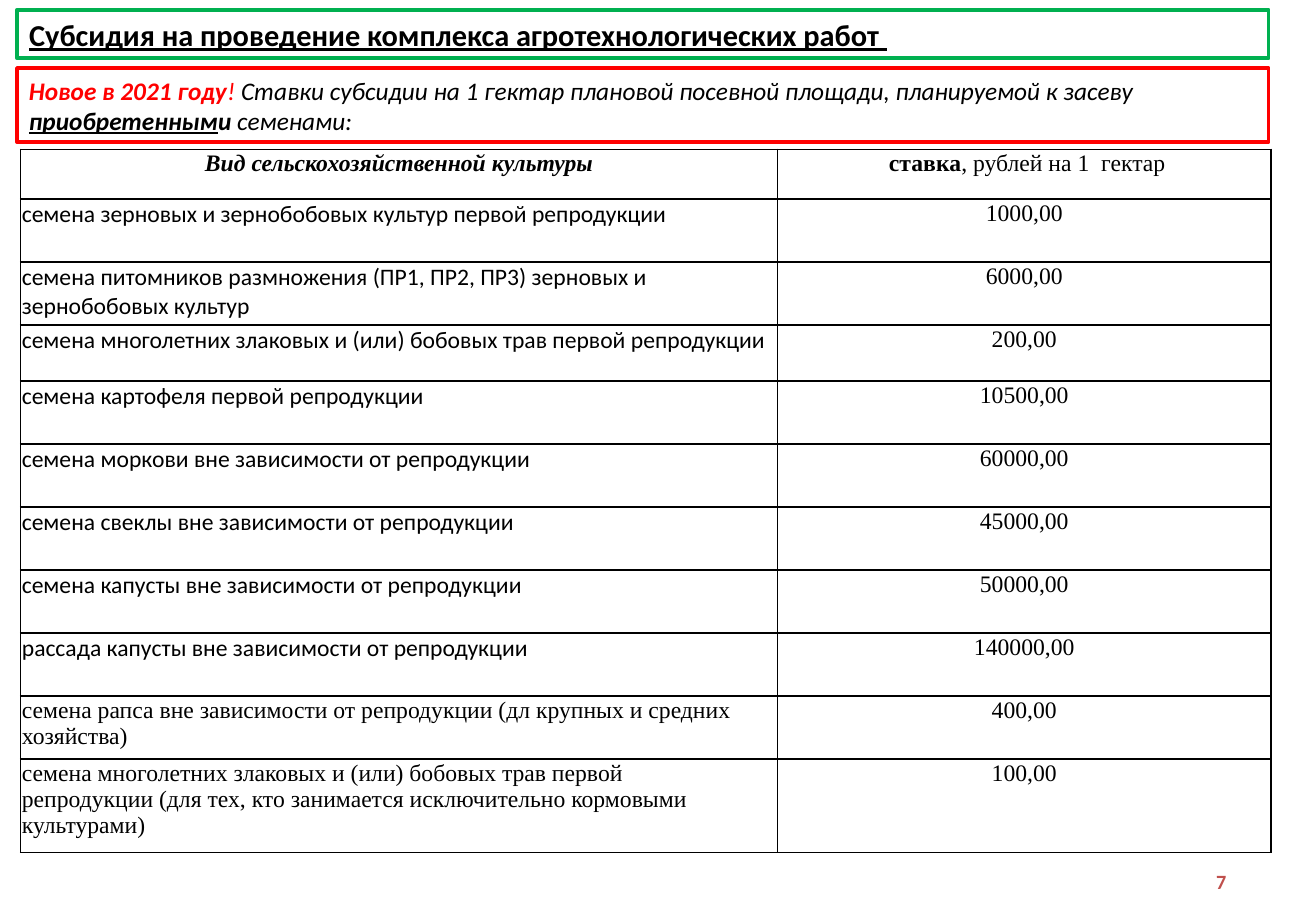
from dataclasses import dataclass

from lxml.etree import fromstring
from pptx import Presentation
from pptx.dml.color import RGBColor
from pptx.enum.shapes import MSO_SHAPE
from pptx.enum.text import MSO_ANCHOR, MSO_AUTO_SIZE, PP_ALIGN
from pptx.oxml.ns import nsdecls
from pptx.util import Inches, Pt


@dataclass(frozen=True)
class Theme:
    """Colours, fonts and sizes used on the slide."""
    ink: str = "000000"
    green: str = "00B050"
    red: str = "FF0000"
    number: str = "C0504D"
    sans: str = "Calibri"
    serif: str = "Times New Roman"
    title_size: int = 18
    note_size: int = 15
    table_size: int = 14
    number_size: int = 12
    frame_width: float = 2.25
    border_width: int = 1


@dataclass(frozen=True)
class Box:
    """A place on the slide in EMU."""
    left: int
    top: int
    width: int
    height: int


THEME = Theme()
COLUMN_SHARES = (623, 406)
ROW_SHARES = (41, 52, 52, 46, 52, 52, 52, 52, 52, 52, 77)
SANS_RATES = (
    ("семена зерновых и зернобобовых культур первой репродукции", "1000,00"),
    ("семена питомников размножения (ПР1, ПР2, ПР3) зерновых и зернобобовых культур", "6000,00"),
    ("семена многолетних злаковых и (или) бобовых трав первой репродукции", "200,00"),
    ("семена картофеля первой репродукции", "10500,00"),
    ("семена моркови вне зависимости от репродукции", "60000,00"),
    ("семена свеклы вне зависимости от репродукции", "45000,00"),
    ("семена капусты вне зависимости от репродукции", "50000,00"),
    ("рассада капусты вне зависимости от репродукции", "140000,00"),
)
SERIF_RATES = (
    ("семена рапса вне зависимости от репродукции (дл крупных и средних хозяйства)", "400,00"),
    ("семена многолетних злаковых и (или) бобовых трав первой\n"
     "репродукции (для тех, кто занимается исключительно кормовыми культурами)", "100,00"),
)


def share_box(presentation, left, top, width, height):
    """Turn percentages of the slide's size into a box."""
    across, down = presentation.slide_width / 100, presentation.slide_height / 100
    return Box(int(left * across), int(top * down), int(width * across), int(height * down))


def place(shape, box):
    """Move a shape into a box."""
    shape.left, shape.top = box.left, box.top
    shape.width, shape.height = box.width, box.height


def write(frame, text, size, font=THEME.sans, color=THEME.ink, align=PP_ALIGN.LEFT,
          bold=False, italic=False, underline=False):
    """Append formatted text to a frame, with each newline starting a paragraph."""
    for index, line in enumerate(text.split("\n")):
        paragraph = frame.add_paragraph() if index else frame.paragraphs[-1]
        paragraph.alignment = align
        run = paragraph.add_run()
        run.text = line
        run.font.size, run.font.name = Pt(size), font
        run.font.bold, run.font.italic, run.font.underline = bold, italic, underline
        run.font.color.rgb = RGBColor.from_string(color)


def frame_shape(shape, box, color):
    """Place a shape as an unfilled outlined banner and return its text frame."""
    place(shape, box)
    shape.fill.background()
    shape.line.color.rgb = RGBColor.from_string(color)
    shape.line.width = Pt(THEME.frame_width)
    frame = shape.text_frame
    frame.word_wrap, frame.auto_size = True, MSO_AUTO_SIZE.NONE
    frame.vertical_anchor = MSO_ANCHOR.MIDDLE
    return frame


def add_title(slide, box):
    """Fill the title placeholder as the green banner."""
    frame = frame_shape(slide.shapes.title, box, THEME.green)
    write(frame, "Субсидия на проведение комплекса агротехнологических работ ",
          THEME.title_size, bold=True, underline=True)


def add_note(slide, box):
    """Add the red banner about the new rates."""
    shape = slide.shapes.add_shape(MSO_SHAPE.RECTANGLE, box.left, box.top, box.width, box.height)
    shape.shadow.inherit = False
    frame = frame_shape(shape, box, THEME.red)
    for text, style in (
        ("Новое в 2021 году", {"color": THEME.red, "bold": True}),
        ("! ", {"color": THEME.red}),
        ("Ставки субсидии на 1 гектар плановой посевной площади, планируемой к засеву ", {}),
        ("приобретенным", {"bold": True, "underline": True}),
        ("и ", {"bold": True}),
        ("семенами:", {}),
    ):
        write(frame, text, THEME.note_size, italic=True, **style)


def format_cell(cell):
    """Give a cell no fill, thin margins and a border on every side."""
    cell.margin_left = cell.margin_right = cell.margin_top = Inches(0.01)
    cell.margin_bottom = 0
    cell.fill.background()
    properties = cell._tc.get_or_add_tcPr()
    for index, side in enumerate("LRTB"):
        properties.insert(index, fromstring(
            f'<a:ln{side} {nsdecls("a")} w="{Pt(THEME.border_width)}"><a:solidFill>'
            f'<a:srgbClr val="{THEME.ink}"/></a:solidFill></a:ln{side}>'))


def add_rates(slide, box):
    """Add the table of subsidy rates."""
    table = slide.shapes.add_table(len(ROW_SHARES), len(COLUMN_SHARES), box.left, box.top,
                                   box.width, box.height).table
    table.first_row = table.horz_banding = False
    for column, share in zip(table.columns, COLUMN_SHARES):
        column.width = int(box.width * share / sum(COLUMN_SHARES))
    for row, share in zip(table.rows, ROW_SHARES):
        row.height = int(box.height * share / sum(ROW_SHARES))
    for cell in table.iter_cells():
        format_cell(cell)
    size = THEME.table_size
    centred = {"font": THEME.serif, "align": PP_ALIGN.CENTER}
    crop_head, rate_head = (table.cell(0, column).text_frame for column in range(2))
    write(crop_head, "Вид сельскохозяйственной культуры", size, bold=True, italic=True, **centred)
    write(rate_head, " ставка", size, bold=True, **centred)
    write(rate_head, ", рублей на 1  гектар", size, **centred)
    for row, (crop, rate) in enumerate(SANS_RATES + SERIF_RATES, start=1):
        font = THEME.sans if row <= len(SANS_RATES) else THEME.serif
        write(table.cell(row, 0).text_frame, crop, size, font=font)
        write(table.cell(row, 1).text_frame, rate, size, **centred)


def add_number(slide, box):
    """Add the page number."""
    frame = slide.shapes.add_textbox(box.left, box.top, box.width, box.height).text_frame
    frame.word_wrap = True
    frame.vertical_anchor = MSO_ANCHOR.MIDDLE
    write(frame, "7", THEME.number_size, color=THEME.number, align=PP_ALIGN.RIGHT, bold=True)


def main():
    """Build and save the slide."""
    presentation = Presentation()
    presentation.slide_width, presentation.slide_height = Inches(10.83), Inches(7.5)
    slide = presentation.slides.add_slide(presentation.slide_layouts[5])
    add_number(slide, share_box(presentation, 90.03, 95.2, 4.06, 3.2))
    add_rates(slide, share_box(presentation, 1.57, 16.4, 95.01, 77.2))
    add_title(slide, share_box(presentation, 1.29, 1.07, 95.11, 5.33))
    add_note(slide, share_box(presentation, 1.29, 7.47, 95.11, 8.13))
    presentation.save("out.pptx")


if __name__ == "__main__":
    main()
